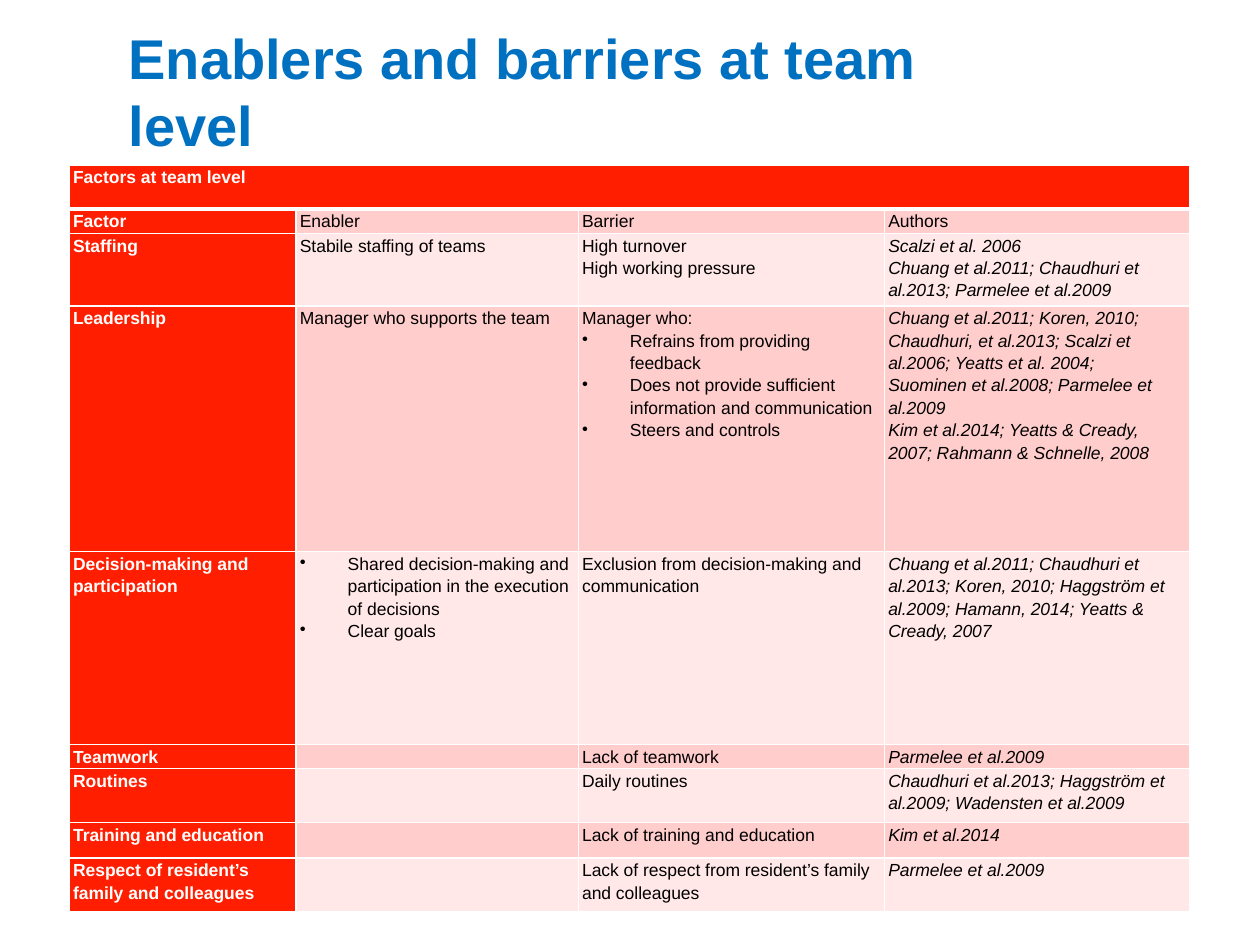
from lxml import etree
from pptx import Presentation
from pptx.dml.color import RGBColor
from pptx.enum.text import MSO_ANCHOR, MSO_AUTO_SIZE, PP_ALIGN
from pptx.oxml.ns import qn
from pptx.util import Inches, Pt

LEFT = PP_ALIGN.LEFT
BOTTOM = MSO_ANCHOR.BOTTOM
GROW = MSO_AUTO_SIZE.SHAPE_TO_FIT_TEXT
FONT = "Arial"
WHITE, BLACK, BLUE, RED = "FFFFFF", "000000", "0070C0", "FF1E00"
BANDS = ["FFCDCC", "FFE8E7"]
BULLET = "•"
INDENT = Inches(0.38)
COLUMNS = [1.8, 2.24, 2.43, 2.42]
ROWS = [0.35, 0.18, 0.57, 1.95, 1.53, 0.18, 0.43, 0.28, 0.43]
CONTENT = [
    ["Factors at team level", "", "", ""],
    ["Factor", "Enabler", "Barrier", "Authors"],
    ["Staffing", "Stabile staffing of teams", "High turnover\nHigh working pressure",
     "Scalzi et al. 2006\nChuang et al.2011; Chaudhuri et al.2013; Parmelee et al.2009"],
    ["Leadership", "Manager who supports the team",
     "Manager who:\n•Refrains from providing feedback\n"
     "•Does not provide sufficient information and communication\n•Steers and controls",
     "Chuang et al.2011; Koren, 2010; Chaudhuri, et al.2013; Scalzi et al.2006; "
     "Yeatts et al. 2004;\nSuominen et al.2008; Parmelee et al.2009\n"
     "Kim et al.2014; Yeatts & Cready, 2007; Rahmann & Schnelle, 2008"],
    ["Decision-making and participation",
     "•Shared decision-making and participation in the execution of decisions\n•Clear goals",
     "Exclusion from decision-making and communication",
     "Chuang et al.2011; Chaudhuri et al.2013; Koren, 2010; Haggström et al.2009; "
     "Hamann, 2014; Yeatts & Cready, 2007"],
    ["Teamwork", "", "Lack of teamwork", "Parmelee et al.2009"],
    ["Routines", "", "Daily routines",
     "Chaudhuri et al.2013; Haggström et al.2009; Wadensten et al.2009"],
    ["Training and education", "", "Lack of training and education", "Kim et al.2014"],
    ["Respect of resident’s family and colleagues", "",
     "Lack of respect from resident’s family and colleagues", "Parmelee et al.2009"],
]


def write(frame, text, size=10, color=BLACK, bold=False, italic=False, spacing=1.15):
    for index, line in enumerate(text.split("\n")):
        paragraph = frame.paragraphs[0] if index == 0 else frame.add_paragraph()
        paragraph.alignment = LEFT
        if line.startswith(BULLET):
            properties = paragraph._p.get_or_add_pPr()
            properties.set("marL", str(INDENT))
            properties.set("indent", str(-INDENT))
            etree.SubElement(properties, qn("a:buChar"), char=BULLET)
        paragraph.line_spacing = spacing
        if not line:
            etree.SubElement(paragraph._p, qn("a:endParaRPr"), sz=str(size * 100))
            continue
        run = paragraph.add_run()
        run.text = line.removeprefix(BULLET)
        run.font.name, run.font.size = FONT, Pt(size)
        run.font.bold, run.font.italic = bold, italic
        run.font.color.rgb = RGBColor.from_string(color)


def paint(cell, fill, bottom_width):
    properties = cell._tc.get_or_add_tcPr()
    for side, width in [("L", 1), ("R", 1), ("T", 1), ("B", bottom_width)]:
        border = etree.SubElement(properties, qn(f"a:ln{side}"), w=str(Pt(width)))
        solid = etree.SubElement(border, qn("a:solidFill"))
        etree.SubElement(solid, qn("a:srgbClr"), val=WHITE)
    cell.fill.solid()
    cell.fill.fore_color.rgb = RGBColor.from_string(fill)


presentation = Presentation()
presentation.slide_width, presentation.slide_height = Inches(10), Inches(7.5)
slide = presentation.slides.add_slide(presentation.slide_layouts[5])

title = slide.shapes.title
title.left, title.top = Inches(0.92), Inches(0.12)
title.width, title.height = Inches(6.75), Inches(1.18)
title.text_frame.vertical_anchor = BOTTOM
title.text_frame.auto_size = GROW
write(title.text_frame, "Enablers and barriers at team level",
      size=32, color=BLUE, bold=True, spacing=1.0)

table = slide.shapes.add_table(
    len(ROWS), len(COLUMNS), Inches(0.55), Inches(1.31),
    Inches(sum(COLUMNS)), Inches(sum(ROWS))).table
table.first_col = True
for column, width in zip(table.columns, COLUMNS):
    column.width = Inches(width)
for row, height in zip(table.rows, ROWS):
    row.height = Inches(height)

for row_index, texts in enumerate(CONTENT):
    for column_index, text in enumerate(texts):
        cell = table.cell(row_index, column_index)
        cell.margin_left = cell.margin_right = Inches(0.03)
        cell.margin_top = cell.margin_bottom = 0
        heading = row_index == 0 or column_index == 0
        paint(cell, RED if heading else BANDS[(row_index - 1) % 2],
              3 if row_index == 0 else 1)
        write(cell.text_frame, text, color=WHITE if heading else BLACK, bold=heading,
              italic=column_index == 3 and row_index > 1)
table.cell(0, 0).merge(table.cell(0, len(COLUMNS) - 1))

presentation.save("out.pptx")
